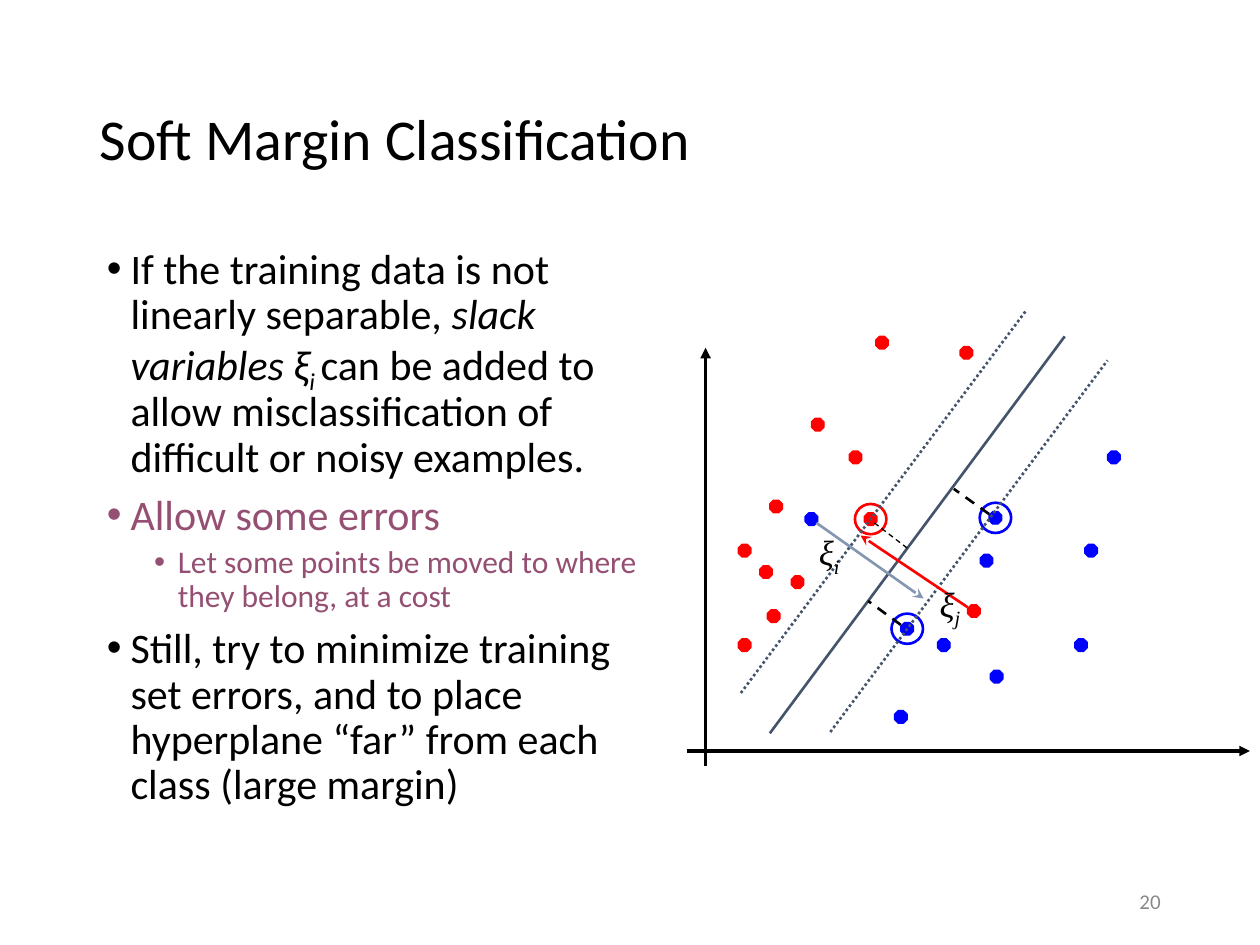
import pptx
import pptx.util
import pptx.dml.color
import pptx.enum.dml
import pptx.enum.shapes
import pptx.enum.text
from lxml import etree

RGB = pptx.dml.color.RGBColor
BLACK = RGB(0x00, 0x00, 0x00)
RED = RGB(0xFF, 0x00, 0x00)
BLUE = RGB(0x00, 0x00, 0xFF)
SLATE = RGB(0x44, 0x54, 0x6A)
STEEL = RGB(0x84, 0x97, 0xB0)
PLUM = RGB(0x95, 0x4F, 0x72)
GREY = RGB(0x89, 0x89, 0x89)

SHAPE = pptx.enum.shapes.MSO_SHAPE
DASH = pptx.enum.dml.MSO_LINE.DASH
DOT = pptx.enum.dml.MSO_LINE.ROUND_DOT
ALIGN = pptx.enum.text.PP_ALIGN
MIDDLE = pptx.enum.text.MSO_ANCHOR.MIDDLE
NS = "http://schemas.openxmlformats.org/drawingml/2006/main"

# Grid of 100 columns by 75 rows; a box is (column, row, columns, rows)
UNIT = pptx.util.Inches(0.1)
COLS, ROWS = 100, 75
BODY, SERIF = "Calibri", "Times New Roman"

# Text parts: (words, italic, subscript)
LIST = [
    (0, BLACK, [
        ("If the training data is not linearly separable, ", False, False),
        ("slack variables ξ", True, False),
        ("i ", True, True),
        ("can be added to allow misclassification of difficult or noisy examples.",
         False, False)]),
    (0, PLUM, [("Allow some errors", False, False)]),
    (1, PLUM, [("Let some points be moved to where they belong, at a cost",
                False, False)]),
    (0, BLACK, [("Still, try to minimize training set errors, and to place "
                 "hyperplane “far” from each class (large margin)", False, False)]),
]
# Level: size, space before, left indent in points
LEVELS = [(24, 7.5, 13.5), (18, 3.8, 40.5)]

# Centres of the points, within the plot
REDS = [(13.9, 12.3), (7.6, 16.2), (9.3, 22.2), (5.1, 27.2), (10.9, 9.7),
        (5.1, 19.7), (6.8, 21.4), (15.1, 17.2), (16, 3.2), (22.7, 4),
        (7.4, 24.9), (23.3, 24.5)]
BLUES = [(25, 17.1), (20.9, 27.2), (31.8, 27.2), (17.5, 32.9), (24.3, 20.5),
         (18, 25.9), (25.1, 29.7), (32.6, 19.7), (34.4, 12.3), (10.4, 17.2)]
RINGS = [(15.1, 17.2, RED), (18, 25.9, BLUE), (25, 17.1, BLUE)]

# Lines: start, end, colour, width, dash, arrowhead
AXES = [
    ((2, 36.8), (2, 3.6), BLACK, 2, None, "triangle"),
    ((0.5, 35.6), (45.2, 35.6), BLACK, 2, None, "triangle"),
]
LINES = [
    ((7.1, 34.2), (30.5, 2.7), SLATE, 1.5, None, None),
    ((11.9, 34.1), (33.9, 4.6), SLATE, 1.5, DOT, None),
    ((4.8, 31), (27.4, 0.7), SLATE, 1.5, DOT, None),
    ((24.5, 16.8), (21.7, 14.8), BLACK, 1.5, DASH, None),
    ((17.5, 25.6), (14.9, 23.7), BLACK, 1.5, DASH, None),
    ((18, 19.5), (15.4, 17.5), BLACK, 0.75, DASH, None),
    ((22.8, 24.2), (14.3, 18.5), RED, 1.5, None, "stealth"),
    ((10.8, 17.5), (19.3, 23.5), STEEL, 1.5, None, "stealth"),
]
LABELS = [(19.6, 21.7, "j"), (10, 17.6, "i")]


def span(*cells):
    return [round(cell * UNIT) for cell in cells]


def style(item, form):
    for key, value in form.items():
        setattr(item, key, value)


def write(para, words, size, color, font=BODY, italic=False, sub=False):
    run = para.add_run()
    run.text = words
    style(run.font, {"size": pptx.util.Pt(size), "name": font, "italic": italic})
    run.font.color.rgb = color
    if sub:
        run._r.get_or_add_rPr().set("baseline", "-25000")


def add_text(slide, box, **form):
    frame = slide.shapes.add_textbox(*span(*box)).text_frame
    style(frame, {"word_wrap": True, **form})
    return frame


def add_title(slide, box):
    title = slide.shapes.title
    style(title, dict(zip(("left", "top", "width", "height"), span(*box))))
    frame = title.text_frame
    style(frame, {"vertical_anchor": MIDDLE, "word_wrap": True,
                  "auto_size": pptx.enum.text.MSO_AUTO_SIZE.NONE})
    para = frame.paragraphs[0]
    style(para, {"alignment": ALIGN.LEFT, "line_spacing": 0.9})
    write(para, "Soft Margin Classification", 33, BLACK)


def add_list(slide, box):
    frame = add_text(slide, box)
    for index, (level, color, parts) in enumerate(LIST):
        para = frame.add_paragraph() if index else frame.paragraphs[0]
        size, before, indent = LEVELS[level]
        style(para, {"level": level, "line_spacing": 0.9,
                     "space_before": pptx.util.Pt(before)})
        props = para._p.get_or_add_pPr()
        props.set("marL", str(pptx.util.Pt(indent)))
        props.set("indent", str(-pptx.util.Pt(13.5)))
        etree.SubElement(props, f"{{{NS}}}buFont", typeface="Arial")
        etree.SubElement(props, f"{{{NS}}}buChar", char="•")
        for words, italic, sub in parts:
            write(para, words, size, color, italic=italic, sub=sub)


def add_line(slide, box, start, end, color, width, dash, head):
    left, top = box[:2]
    line = slide.shapes.add_connector(
        pptx.enum.shapes.MSO_CONNECTOR.STRAIGHT,
        *span(left + start[0], top + start[1], left + end[0], top + end[1]))
    line.line.color.rgb = color
    style(line.line, {"width": pptx.util.Pt(width), "dash_style": dash})
    if head:
        etree.SubElement(line.line._get_or_add_ln(), f"{{{NS}}}tailEnd", type=head)
    etree.SubElement(line._element.spPr, f"{{{NS}}}effectLst")


def add_mark(slide, box, kind, spot, size, color, width, solid):
    wide, high = size
    mark = slide.shapes.add_shape(kind, *span(
        box[0] + spot[0] - wide / 2, box[1] + spot[1] - high / 2, wide, high))
    mark.shadow.inherit = False
    mark.line.color.rgb = color
    mark.line.width = pptx.util.Pt(width)
    if solid:
        mark.fill.solid()
        mark.fill.fore_color.rgb = color
    else:
        mark.fill.background()


def add_plot(slide, box):
    for line in AXES:
        add_line(slide, box, *line)
    # Points of both classes
    for spots, color in ((REDS, RED), (BLUES, BLUE)):
        for spot in spots:
            add_mark(slide, box, SHAPE.OCTAGON, spot, (1, 1), color, 0.75, True)
    # Rings round the support vectors
    for col, row, color in RINGS:
        add_mark(slide, box, SHAPE.OVAL, (col, row), (2.5, 2.4), color, 1.5, False)
    # Hyperplane, margins and slack arrows
    for line in LINES:
        add_line(slide, box, *line)
    # Slack labels
    for col, row, index in LABELS:
        para = add_text(slide, (box[0] + col, box[1] + row, 7.7, 4.3)).paragraphs[0]
        write(para, "ξ", 20, BLACK, SERIF, True)
        write(para, index, 20, BLACK, SERIF, True, True)


def add_number(slide, box):
    para = add_text(slide, box, vertical_anchor=MIDDLE).paragraphs[0]
    para.alignment = ALIGN.RIGHT
    write(para, "20", 12, GREY)


def main():
    deck = pptx.Presentation()
    style(deck, {"slide_width": COLS * UNIT, "slide_height": ROWS * UNIT})
    slide = deck.slides.add_slide(deck.slide_layouts.get_by_name("Title Only"))
    add_number(slide, (70.6, 69.5, 22.5, 4))
    add_title(slide, (6.9, 4, 86.2, 14.5))
    add_list(slide, (7.5, 19.2, 45.8, 53.3))
    add_plot(slide, (54, 24, 46, 37))
    deck.save("out.pptx")


if __name__ == "__main__":
    main()
